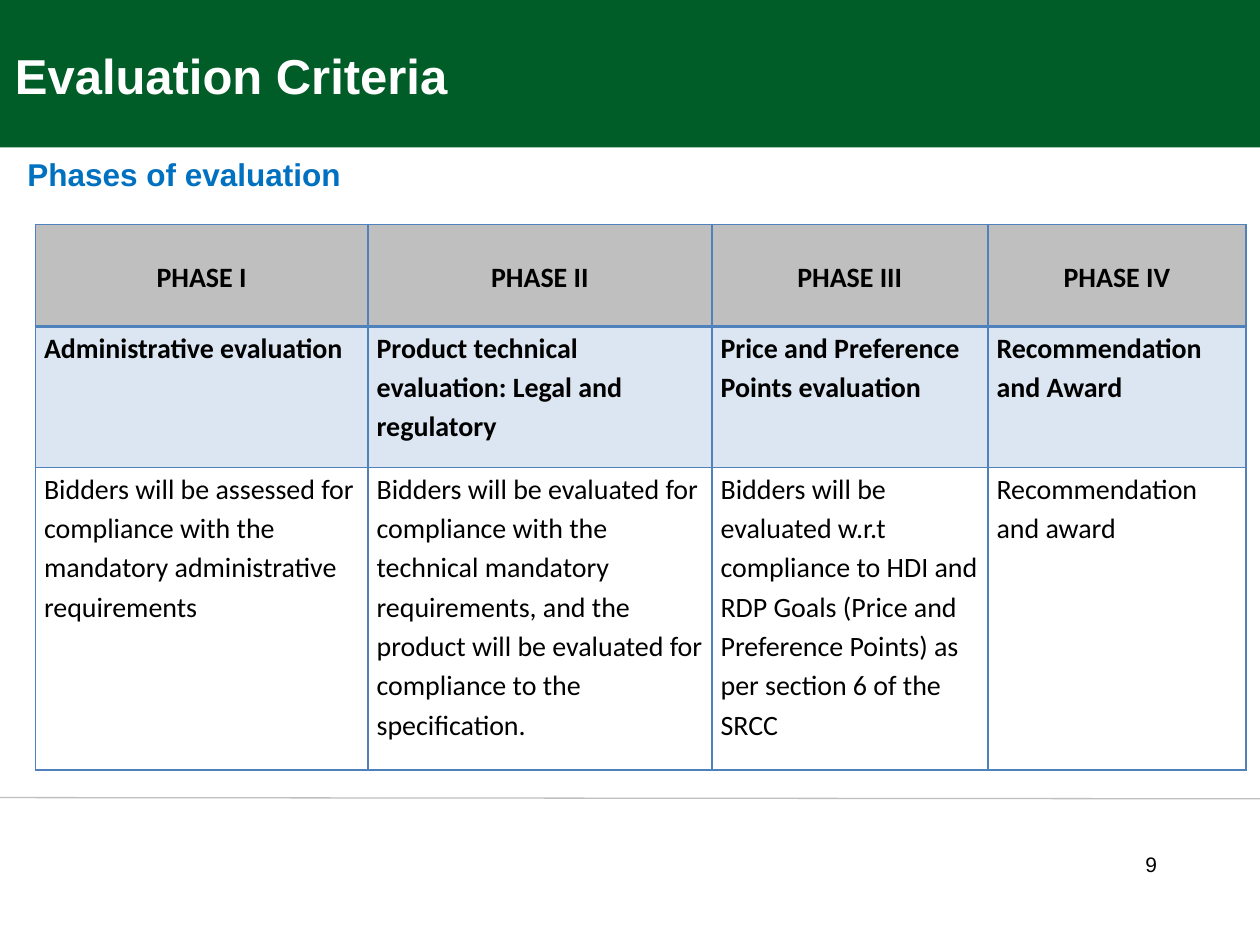
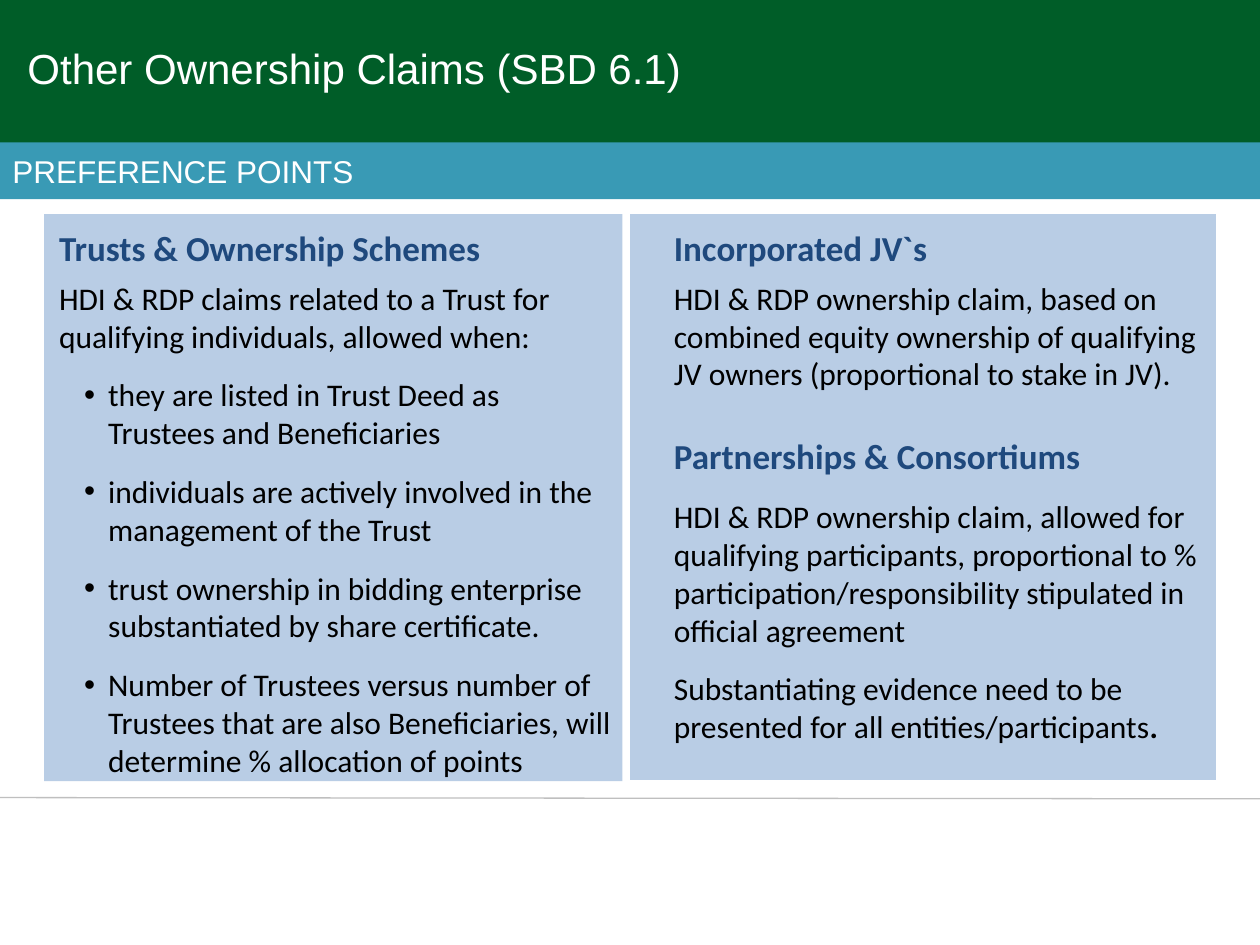
from dataclasses import dataclass
from typing import NamedTuple

from lxml.etree import SubElement
from pptx import Presentation
from pptx.dml.color import RGBColor
from pptx.enum.shapes import MSO_CONNECTOR as Connector, MSO_SHAPE as Preset
from pptx.enum.text import MSO_ANCHOR as Anchor, PP_ALIGN as Align
from pptx.oxml.ns import qn
from pptx.util import Inches, Pt

# The page is a grid of 100 columns and 75 rows.
COLUMNS, ROWS = 100, 75
WIDTH, HEIGHT = Inches(10), Inches(7.5)

GREEN = RGBColor(0x00, 0x5D, 0x28)
TEAL = RGBColor(0x39, 0x9A, 0xB5)
PALE_BLUE = RGBColor(0xB9, 0xCD, 0xE5)
ROW_BLUE = RGBColor(0xDC, 0xE6, 0xF2)
BORDER_BLUE = RGBColor(0x4F, 0x81, 0xBD)
SUBTITLE_BLUE = RGBColor(0x00, 0x70, 0xC0)
NAVY = RGBColor(0x1F, 0x49, 0x7D)
GRAY = RGBColor(0xBF, 0xBF, 0xBF)
BLACK = RGBColor(0x00, 0x00, 0x00)
WHITE = RGBColor(0xFF, 0xFF, 0xFF)


class Area(NamedTuple):
    """A rectangle in grid columns and rows."""
    column: float
    row: float
    columns: float
    rows: float


@dataclass(frozen=True)
class Style:
    size: float
    color: RGBColor
    font: str = "Calibri"
    bold: bool = False


class Part(NamedTuple):
    """A paragraph: its spans, each with a style, and its layout."""
    spans: list[tuple[str, Style]]
    layout: dict = {}
    bullet: bool = False
    indent: float = 0
    hanging: float = 0


BIG_TITLE = Style(28, WHITE, "Arial", True)
TITLE = Style(24, WHITE, "Arial")
SUBTITLE = Style(18, SUBTITLE_BLUE, "Arial", True)
BAND_TEXT = Style(18, WHITE, "Arial")
NUMBER = Style(12, BLACK, "Arial")
HEADING = Style(20, NAVY, bold=True)
BODY = Style(18, BLACK)
BODY_BOLD = Style(18, BLACK, bold=True)
CELL = Style(16, BLACK)
CELL_BOLD = Style(16, BLACK, bold=True)

SPACED = {"space_before": Pt(6), "space_after": Pt(6)}
OPEN_LINES = {"line_spacing": 1.5}
CELL_LINES = {"line_spacing": 1.15}


def across(columns: float) -> int:
    return round(WIDTH * columns / COLUMNS)


def down(rows: float) -> int:
    return round(HEIGHT * rows / ROWS)


def place(area: Area) -> tuple[int, int, int, int]:
    return across(area.column), down(area.row), across(area.columns), down(area.rows)


def apply(target, values: dict) -> None:
    for name, value in values.items():
        setattr(target, name, value)


def write(frame, parts: list[Part], **frame_values) -> None:
    apply(frame, {"word_wrap": True, **frame_values})
    for index, part in enumerate(parts):
        para = frame.add_paragraph() if index else frame.paragraphs[0]
        if part.bullet:
            para.level = 1
        properties = para._p.get_or_add_pPr()
        properties.set("marL", str(across(part.indent)))
        properties.set("indent", str(-across(part.hanging)))
        if part.bullet:
            SubElement(properties, qn("a:buFont")).set("typeface", "Arial")
            SubElement(properties, qn("a:buChar")).set("char", "•")
        apply(para, part.layout)
        for text, style in part.spans:
            span = para.add_run()
            span.text = text
            apply(span.font, {"size": Pt(style.size), "name": style.font,
                              "bold": style.bold})
            span.font.color.rgb = style.color


def add_text(page, area: Area, parts: list[Part], **frame_values) -> None:
    write(page.shapes.add_textbox(*place(area)).text_frame, parts, **frame_values)


def add_block(page, area: Area, color: RGBColor):
    block = page.shapes.add_shape(Preset.RECTANGLE, *place(area))
    block.shadow.inherit = False
    block.fill.solid()
    block.fill.fore_color.rgb = color
    block.line.fill.background()
    return block


def add_page(deck, title: str, style: Style, title_area: Area):
    """Adds a page with the green title band and the footer rule."""
    page = deck.slides.add_slide(deck.slide_layouts[6])
    add_block(page, Area(0, 0, COLUMNS, 11.7), GREEN)
    rule = page.shapes.add_connector(Connector.STRAIGHT, 0, down(63.3), WIDTH, down(63.4))
    rule.line.color.rgb = GRAY
    rule.line.width = Pt(0.75)
    SubElement(rule._element.spPr, qn("a:effectLst"))
    add_text(page, title_area, [Part([(title, style)])], vertical_anchor=Anchor.BOTTOM)
    return page


def add_border(cell, side: str, points: float) -> None:
    properties = cell._tc.get_or_add_tcPr()
    line = SubElement(properties, qn(f"a:ln{side}"), w=str(Pt(points)))
    fill = SubElement(line, qn("a:solidFill"))
    SubElement(fill, qn("a:srgbClr"), val=str(BORDER_BLUE))


class RowKind(NamedTuple):
    height: float
    style: Style
    fill: RGBColor | None
    top: float
    bottom: float
    layout: dict
    anchor: Anchor


PHASE_ROWS = [
    RowKind(8.1, CELL_BOLD, GRAY, 1, 2, {**CELL_LINES, "alignment": Align.CENTER},
            Anchor.MIDDLE),
    RowKind(11.2, CELL_BOLD, ROW_BLUE, 2, 1, CELL_LINES, Anchor.TOP),
    RowKind(24, CELL, None, 1, 1, CELL_LINES, Anchor.TOP),
]
PHASE_WIDTHS = [26.4, 27.3, 21.9, 20.5]
PHASES = [
    ("PHASE I", "Administrative evaluation",
     "Bidders will be assessed for compliance with the mandatory administrative "
     "requirements"),
    ("PHASE II", "Product technical evaluation: Legal and regulatory",
     "Bidders will be evaluated for compliance with the technical mandatory "
     "requirements, and the product will be evaluated for compliance to the "
     "specification."),
    ("PHASE III", "Price and Preference Points evaluation",
     "Bidders will be evaluated w.r.t compliance to HDI and RDP Goals (Price and "
     "Preference Points) as per section 6 of the SRCC"),
    ("PHASE IV", "Recommendation and Award", "Recommendation and award"),
]


def add_phase_table(page) -> None:
    area = Area(2.8, 17.8, sum(PHASE_WIDTHS), sum(kind.height for kind in PHASE_ROWS))
    table = page.shapes.add_table(len(PHASE_ROWS), len(PHASES), *place(area)).table
    apply(table, {"first_row": False, "horz_banding": False})
    for column, width in zip(table.columns, PHASE_WIDTHS):
        column.width = across(width)
    for row, kind in enumerate(PHASE_ROWS):
        table.rows[row].height = down(kind.height)
        for column, phase in enumerate(PHASES):
            cell = table.cell(row, column)
            for side, points in zip("LRTB", (1, 1, kind.top, kind.bottom)):
                add_border(cell, side, points)
            if kind.fill is None:
                cell.fill.background()
            else:
                cell.fill.solid()
                cell.fill.fore_color.rgb = kind.fill
            apply(cell, {"margin_left": across(0.7), "margin_right": across(0.7),
                         "margin_top": 0, "margin_bottom": 0,
                         "vertical_anchor": kind.anchor})
            write(cell.text_frame, [Part([(phase[row], kind.style)], kind.layout)])


def add_evaluation_page(deck) -> None:
    page = add_page(deck, "Evaluation Criteria", BIG_TITLE, Area(0.2, 1.6, 60.8, 7.2))
    add_text(page, Area(1.2, 11.8, 97.6, 8.1), [Part([("Phases of evaluation", SUBTITLE)])])
    add_phase_table(page)
    add_text(page, Area(41.3, 67.1, 51.5, 7.9),
             [Part([("9", NUMBER)], {"alignment": Align.RIGHT})])


TRUST_CONDITIONS = [
    "they are listed in Trust Deed as Trustees and Beneficiaries",
    "individuals are actively involved in the management of the Trust",
    "trust ownership in bidding enterprise substantiated by share certificate.",
    "Number of Trustees versus number of Trustees that are also Beneficiaries, "
    "will determine % allocation of points",
]
TRUSTS = [
    Part([("Trusts & Ownership Schemes", HEADING)], OPEN_LINES),
    Part([("HDI & RDP claims related to a Trust for qualifying individuals, "
           "allowed when:", BODY)], SPACED),
    *(Part([(condition, BODY)], SPACED, bullet=True, indent=3.9, hanging=1.9)
      for condition in TRUST_CONDITIONS),
]
VENTURES = [part._replace(indent=2.9) for part in (
    Part([("Incorporated JV`s", HEADING)], OPEN_LINES),
    Part([("HDI & RDP ownership claim, based on combined equity ownership of "
           "qualifying JV owners (proportional to stake in JV).", BODY)], SPACED),
    Part([("Partnerships & Consortiums", HEADING)], {**OPEN_LINES, **SPACED}),
    Part([("HDI & RDP ownership claim, allowed for qualifying participants, "
           "proportional to % participation/responsibility stipulated in official "
           "agreement", BODY)], SPACED),
    Part([("Substantiating evidence need to be presented for all "
           "entities/participants", BODY), (".", BODY_BOLD)], SPACED),
)]


def add_ownership_page(deck) -> None:
    page = add_page(deck, "Other Ownership Claims (SBD 6.1)", TITLE,
                    Area(1.2, 2.9, 78.6, 5))
    panels = [
        (Area(3.5, 17, 45.9, 45), Area(3.7, 15.8, 45.9, 48.6), TRUSTS),
        (Area(50, 17, 46.5, 44.9), Area(49.6, 15.8, 48.8, 44.3), VENTURES),
    ]
    for panel, text_area, parts in panels:
        add_block(page, panel, PALE_BLUE)
        add_text(page, text_area, parts)
    band = add_block(page, Area(0, 11.3, COLUMNS, 4.5), TEAL)
    write(band.text_frame, [Part([("PREFERENCE POINTS", BAND_TEXT)],
                                 {"alignment": Align.LEFT})],
          vertical_anchor=Anchor.MIDDLE)


def main() -> None:
    deck = Presentation()
    apply(deck, {"slide_width": WIDTH, "slide_height": HEIGHT})
    add_evaluation_page(deck)
    add_ownership_page(deck)
    deck.save("out.pptx")


if __name__ == "__main__":
    main()
